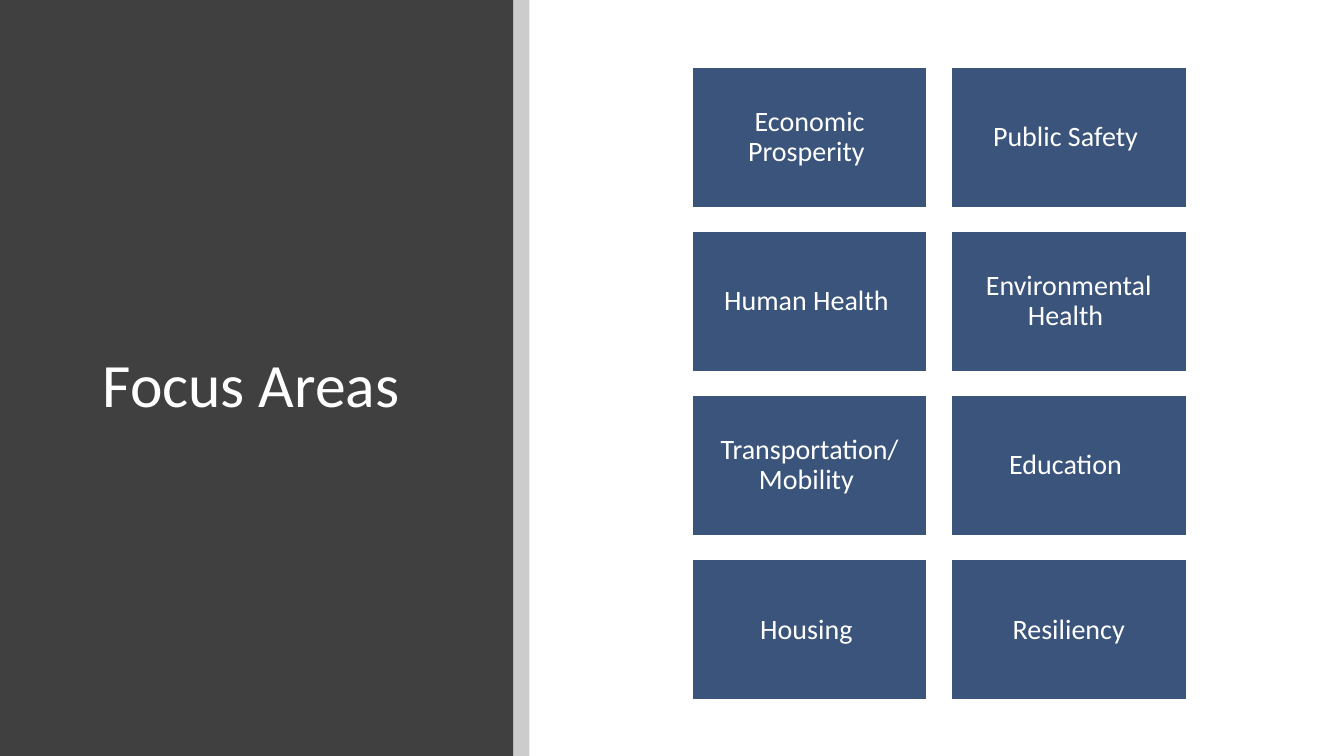
from lxml import etree
from pptx import Presentation
from pptx.dml.color import RGBColor
from pptx.enum.shapes import MSO_SHAPE
from pptx.enum.text import MSO_ANCHOR, PP_ALIGN
from pptx.oxml.ns import qn
from pptx.util import Inches, Pt

RECTANGLE = MSO_SHAPE.RECTANGLE
MIDDLE = MSO_ANCHOR.MIDDLE
LEFT, CENTER = PP_ALIGN.LEFT, PP_ALIGN.CENTER

COLORS = {"panel": "404040", "strip": "000000", "tile": "3A547C", "white": "FFFFFF"}
FONT = "Calibri"
PANEL_WIDTH, STRIP_WIDTH = 5.09, 0.16
GRID_LEFT, GRID_TOP = 6.86, 0.66
TILE_WIDTH, TILE_HEIGHT, GAP = 2.34, 1.4, 0.23
COLUMNS = 2
# The trailing spaces take part in the centring of each line.
FOCUS_AREAS = [
    "Economic Prosperity ", "Public Safety ",
    "Human Health ", "Environmental Health ",
    "Transportation/ Mobility ", "Education ",
    "Housing ", "Resiliency",
]

presentation = Presentation()
presentation.slide_width = Inches(13.33)
presentation.slide_height = Inches(7.5)
slide = presentation.slides.add_slide(presentation.slide_layouts[6])


def add_rectangle(left, top, width, height, color):
    shape = slide.shapes.add_shape(
        RECTANGLE, Inches(left), Inches(top), Inches(width), Inches(height))
    shape.shadow.inherit = False
    shape.fill.solid()
    shape.fill.fore_color.rgb = RGBColor.from_string(COLORS[color])
    shape.line.fill.background()
    return shape


def write_text(shape, text, size, alignment):
    frame = shape.text_frame
    frame.word_wrap = True
    frame.vertical_anchor = MIDDLE
    paragraph = frame.paragraphs[0]
    paragraph.text = text
    paragraph.alignment = alignment
    paragraph.line_spacing = 0.9
    paragraph.font.name = FONT
    paragraph.font.size = Pt(size)
    paragraph.font.color.rgb = RGBColor.from_string(COLORS["white"])


# Side panel with its translucent edge
add_rectangle(0, 0, PANEL_WIDTH, 7.5, "panel")
strip = add_rectangle(PANEL_WIDTH, 0, STRIP_WIDTH, 7.5, "strip")
strip_color = strip.fill._xPr.find(qn("a:solidFill"))[0]
etree.SubElement(strip_color, qn("a:alpha"), val="20000")

title = slide.shapes.add_textbox(Inches(0.92), Inches(0.89), Inches(3.65), Inches(5.91))
write_text(title, "Focus Areas", 44, LEFT)

# Grid of focus areas
for index, area in enumerate(FOCUS_AREAS):
    row, column = divmod(index, COLUMNS)
    tile = add_rectangle(
        GRID_LEFT + column * (TILE_WIDTH + GAP),
        GRID_TOP + row * (TILE_HEIGHT + GAP),
        TILE_WIDTH, TILE_HEIGHT, "tile")
    tile.line.color.rgb = RGBColor.from_string(COLORS["white"])
    tile.line.width = Pt(1.5)
    frame = tile.text_frame
    frame.margin_left = frame.margin_right = Inches(0.08)
    frame.margin_top = frame.margin_bottom = Inches(0.08)
    write_text(tile, area, 20, CENTER)

presentation.save("out.pptx")
